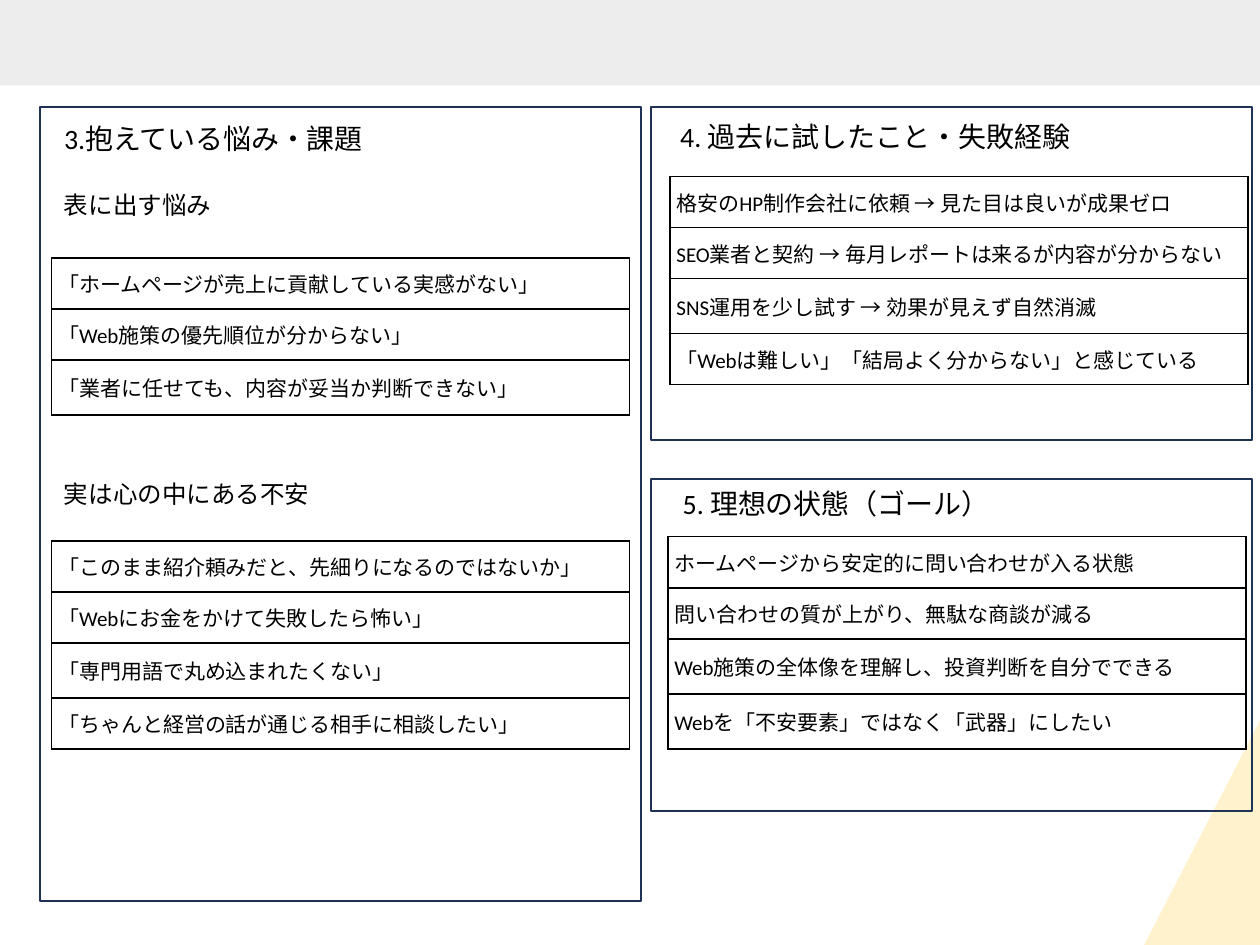
from lxml.etree import SubElement
from pptx import Presentation
from pptx.dml.color import RGBColor
from pptx.enum.shapes import MSO_SHAPE
from pptx.enum.text import MSO_ANCHOR
from pptx.oxml.ns import qn
from pptx.util import Pt

FONT = "Calibri"
BLACK, NAVY, GRAY, CREAM = "000000", "1E3256", "EDEDED", "FFF2CC"
SHORT, TALL = 29.2, 31.4  # table row heights
TABLE_WIDTH = 330.3
PANEL_WIDTH = 343.4

# Headings: text, left, top, width, height, size
HEADINGS = [
    ("3.抱えている悩み・課題", 29.5, 66.2, 301, 26.6, 16),
    ("表に出す悩み", 29.5, 105.1, 184.3, 24.2, 14),
    ("実は心の中にある不安", 29.5, 270, 184.3, 24.2, 14),
    ("4. 過去に試したこと・失敗経験", 381.6, 64.8, 248.4, 26.6, 16),
    ("5. 理想の状態（ゴール）", 383, 274.3, 236.9, 26.6, 16),
]

# Tables: left, top, rows of (text, height)
TABLES = [
    (29.5, 147.4, [
        ("「ホームページが売上に貢献している実感がない」", SHORT),
        ("「Web施策の優先順位が分からない」", SHORT),
        ("「業者に任せても、内容が妥当か判断できない」", TALL),
    ]),
    (29.5, 309, [
        ("「このまま紹介頼みだと、先細りになるのではないか」", SHORT),
        ("「Webにお金をかけて失敗したら怖い」", SHORT),
        ("「専門用語で丸め込まれたくない」", TALL),
        ("「ちゃんと経営の話が通じる相手に相談したい」", SHORT),
    ]),
    (382.8, 100.8, [
        ("格安のHP制作会社に依頼 → 見た目は良いが成果ゼロ", SHORT),
        ("SEO業者と契約 → 毎月レポートは来るが内容が分からない", SHORT),
        ("SNS運用を少し試す → 効果が見えず自然消滅", TALL),
        ("「Webは難しい」「結局よく分からない」と感じている", SHORT),
    ]),
    (381.6, 306.7, [
        ("ホームページから安定的に問い合わせが入る状態", SHORT),
        ("問い合わせの質が上がり、無駄な商談が減る", SHORT),
        ("Web施策の全体像を理解し、投資判断を自分でできる", TALL),
        ("Webを「不安要素」ではなく「武器」にしたい", TALL),
    ]),
]

# Panel frames: left, top, height
PANELS = [(23, 61.2, 453.6), (372.2, 61.2, 190.1), (372.2, 273.6, 190.1)]


def color(value):
    return RGBColor.from_string(value)


def apply(target, values):
    for name, value in values.items():
        setattr(target, name, value)


def write(frame, text, size):
    para = frame.paragraphs[0]
    span = para.add_run()
    span.text = text
    apply(span.font, {"name": FONT, "size": Pt(size)})
    span.font.color.rgb = color(BLACK)


def add_block(page, kind, bounds, fill=None, line=None):
    block = page.shapes.add_shape(kind, *map(Pt, bounds))
    block.shadow.inherit = False
    if fill:
        block.fill.solid()
        block.fill.fore_color.rgb = color(fill)
    else:
        block.fill.background()
    if line:
        block.line.color.rgb = color(line)
        block.line.width = Pt(1)
    else:
        block.line.fill.background()
    return block


def add_borders(cell):
    props = cell._tc.get_or_add_tcPr()
    for index, side in enumerate(("lnL", "lnR", "lnT", "lnB")):
        edge = SubElement(props, qn(f"a:{side}"), w=str(Pt(1)))
        fill = SubElement(edge, qn("a:solidFill"))
        SubElement(fill, qn("a:srgbClr"), val=BLACK)
        props.insert(index, edge)


def add_list_table(page, left, top, rows):
    height = sum(row_height for _, row_height in rows)
    frame = page.shapes.add_table(
        len(rows), 1, Pt(left), Pt(top), Pt(TABLE_WIDTH), Pt(height))
    table = frame.table
    apply(table, {"first_row": False, "horz_banding": False})
    margins = {f"margin_{side}": Pt(3.75)
               for side in ("left", "right", "top", "bottom")}
    for index, (text, row_height) in enumerate(rows):
        table.rows[index].height = Pt(row_height)
        cell = table.cell(index, 0)
        apply(cell, {**margins, "vertical_anchor": MSO_ANCHOR.MIDDLE})
        cell.fill.background()
        add_borders(cell)
        write(cell.text_frame, text, 12)


def main():
    deck = Presentation()
    apply(deck, {"slide_width": Pt(720), "slide_height": Pt(540)})
    page = deck.slides.add_slide(deck.slide_layouts[6])

    # Top band and corner triangle
    add_block(page, MSO_SHAPE.RECTANGLE, (0, 0, 720, 48.8), fill=GRAY)
    corner = add_block(page, MSO_SHAPE.RIGHT_TRIANGLE,
                       (653.8, 411.8, 66.2, 128.2), fill=CREAM)
    corner._element.spPr.get_or_add_xfrm().set("flipH", "1")

    # Headings
    for text, left, top, width, height, size in HEADINGS:
        box = page.shapes.add_textbox(*map(Pt, (left, top, width, height)))
        box.text_frame.word_wrap = True
        write(box.text_frame, text, size)

    # Tables
    for left, top, rows in TABLES:
        add_list_table(page, left, top, rows)

    # Panel frames
    for left, top, height in PANELS:
        add_block(page, MSO_SHAPE.RECTANGLE,
                  (left, top, PANEL_WIDTH, height), line=NAVY)

    deck.save("out.pptx")


if __name__ == "__main__":
    main()
